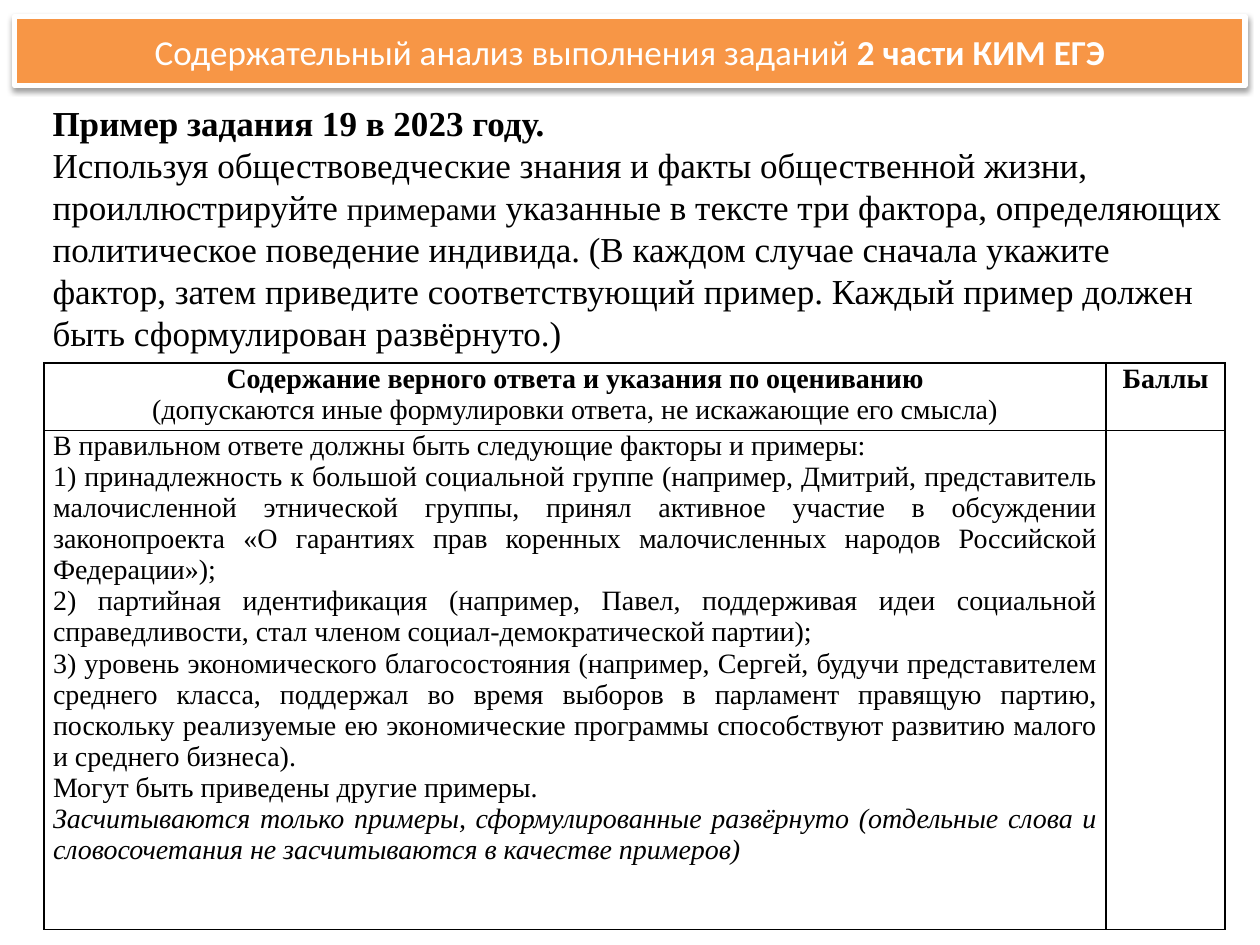
from lxml import etree
from pptx import Presentation
from pptx.dml.color import RGBColor
from pptx.enum import shapes, text
from pptx.oxml import parse_xml
from pptx.oxml.ns import nsdecls, qn
from pptx.util import Cm, Pt

ORANGE = RGBColor(0xF7, 0x96, 0x46)
WHITE = RGBColor(0xFF, 0xFF, 0xFF)
BLACK = RGBColor(0, 0, 0)
SERIF = "Times New Roman"
ALIGN = text.PP_ALIGN

TITLE = [("Содержательный анализ выполнения заданий ", {}),
         ("2 части КИМ ЕГЭ", {"bold": True})]
TASK = [
    [("Пример задания 19 в 2023 году.", {"bold": True})],
    [("Используя обществоведческие знания и факты общественной жизни, "
      "проиллюстрируйте ", {}),
     ("примерами", {"size": Pt(18)}),
     (" указанные в тексте три фактора, определяющих политическое поведение "
      "индивида. (В каждом случае сначала укажите фактор, затем приведите "
      "соответствующий пример. Каждый пример должен быть сформулирован "
      "развёрнуто.)", {})],
]
HEAD = [("Содержание верного ответа и указания по оцениванию", {"bold": True}),
        ("\n", {}),
        ("(допускаются иные формулировки ответа, не искажающие его смысла)", {})]
SCORE = [("Баллы", {"bold": True})]
ANSWER = [
    [("В правильном ответе должны быть следующие факторы и примеры:", {})],
    [("1) принадлежность к большой социальной группе (например, Дмитрий, "
      "представитель малочисленной этнической группы, принял активное участие "
      "в обсуждении законопроекта «О гарантиях прав коренных малочисленных "
      "народов Российской Федерации»);", {})],
    [("2) партийная идентификация (например, Павел, поддерживая идеи "
      "социальной справедливости, стал членом социал-демократической "
      "партии);", {})],
    [("3) уровень экономического благосостояния (например, Сергей, будучи "
      "представителем среднего класса, поддержал во время выборов в парламент "
      "правящую партию, поскольку реализуемые ею экономические программы "
      "способствуют развитию малого и среднего бизнеса).", {})],
    [("Могут быть приведены другие примеры.", {})],
    [("Засчитываются только примеры, сформулированные развёрнуто (отдельные "
      "слова и словосочетания не засчитываются в качестве примеров)",
      {"italic": True})],
]


def write(frame, paras, size, align, face=SERIF, color=BLACK):
    """Fill the frame; each paragraph is a list of (words, font changes)."""
    for i, runs in enumerate(paras):
        para = frame.paragraphs[0] if i == 0 else frame.add_paragraph()
        para.alignment = align
        for words, style in runs:
            if words == "\n":
                para.add_line_break()
                continue
            run = para.add_run()
            run.text = words
            font = run.font
            font.name, font.size = face, Pt(size)
            font.color.rgb = color
            for key, value in style.items():
                setattr(font, key, value)


def add_title(slide, x, y, w, h):
    bar = slide.shapes.add_shape(shapes.MSO_SHAPE.RECTANGLE, x, y, w, h)
    bar.fill.solid()
    bar.fill.fore_color.rgb = ORANGE
    bar.line.color.rgb = WHITE
    bar.line.width = Pt(3)
    bar.shadow.inherit = False
    glow = bar.element.spPr.find(qn("a:effectLst"))
    glow.append(parse_xml(
        f'<a:outerShdw {nsdecls("a")} blurRad="{Pt(3.1)}" dist="{Pt(1.6)}" '
        'dir="5400000" rotWithShape="0"><a:srgbClr val="000000">'
        '<a:alpha val="38000"/></a:srgbClr></a:outerShdw>'))
    frame = bar.text_frame
    frame.word_wrap = True
    frame.vertical_anchor = text.MSO_ANCHOR.MIDDLE
    write(frame, [TITLE], 20, ALIGN.CENTER, "Calibri", WHITE)


def add_task(slide, x, y, w, h):
    frame = slide.shapes.add_textbox(x, y, w, h).text_frame
    frame.word_wrap = True
    frame.margin_left, frame.margin_right = Cm(0.35), Cm(0.2)
    write(frame, TASK, 20, ALIGN.LEFT)
    for para in frame.paragraphs:
        para.line_spacing = Pt(24)


def add_border(cell):
    props = cell._tc.get_or_add_tcPr()
    for i, side in enumerate(("lnL", "lnR", "lnT", "lnB")):
        line = etree.Element(qn(f"a:{side}"), w=str(Pt(1)))
        fill = etree.SubElement(line, qn("a:solidFill"))
        etree.SubElement(fill, qn("a:srgbClr"), val=str(BLACK))
        props.insert(i, line)


def add_grid(slide, x, y, widths, heights):
    table = slide.shapes.add_table(2, 2, x, y, sum(widths), sum(heights)).table
    for col, width in zip(table.columns, widths):
        col.width = width
    for row, height in zip(table.rows, heights):
        row.height = height
    for cell in table.iter_cells():
        cell.margin_left = cell.margin_right = Cm(0.18)
        cell.margin_top = cell.margin_bottom = 0
        cell.fill.background()
        add_border(cell)
    write(table.cell(0, 0).text_frame, [HEAD], 16, ALIGN.CENTER)
    write(table.cell(0, 1).text_frame, [SCORE], 16, ALIGN.CENTER)
    write(table.cell(1, 0).text_frame, ANSWER, 16, ALIGN.JUSTIFY)


def main():
    deck = Presentation()
    deck.slide_width, deck.slide_height = Cm(25.4), Cm(19.05)
    slide = deck.slides.add_slide(deck.slide_layouts[6])
    add_title(slide, Cm(0.3), Cm(0.33), Cm(24.8), Cm(1.4))
    add_task(slide, Cm(0.71), Cm(1.93), Cm(24.21), Cm(5))
    add_grid(slide, Cm(0.89), Cm(7.32),
             (Cm(21.41), Cm(2.39)), (Cm(1.25), Cm(10.06)))
    deck.save("out.pptx")


if __name__ == "__main__":
    main()
